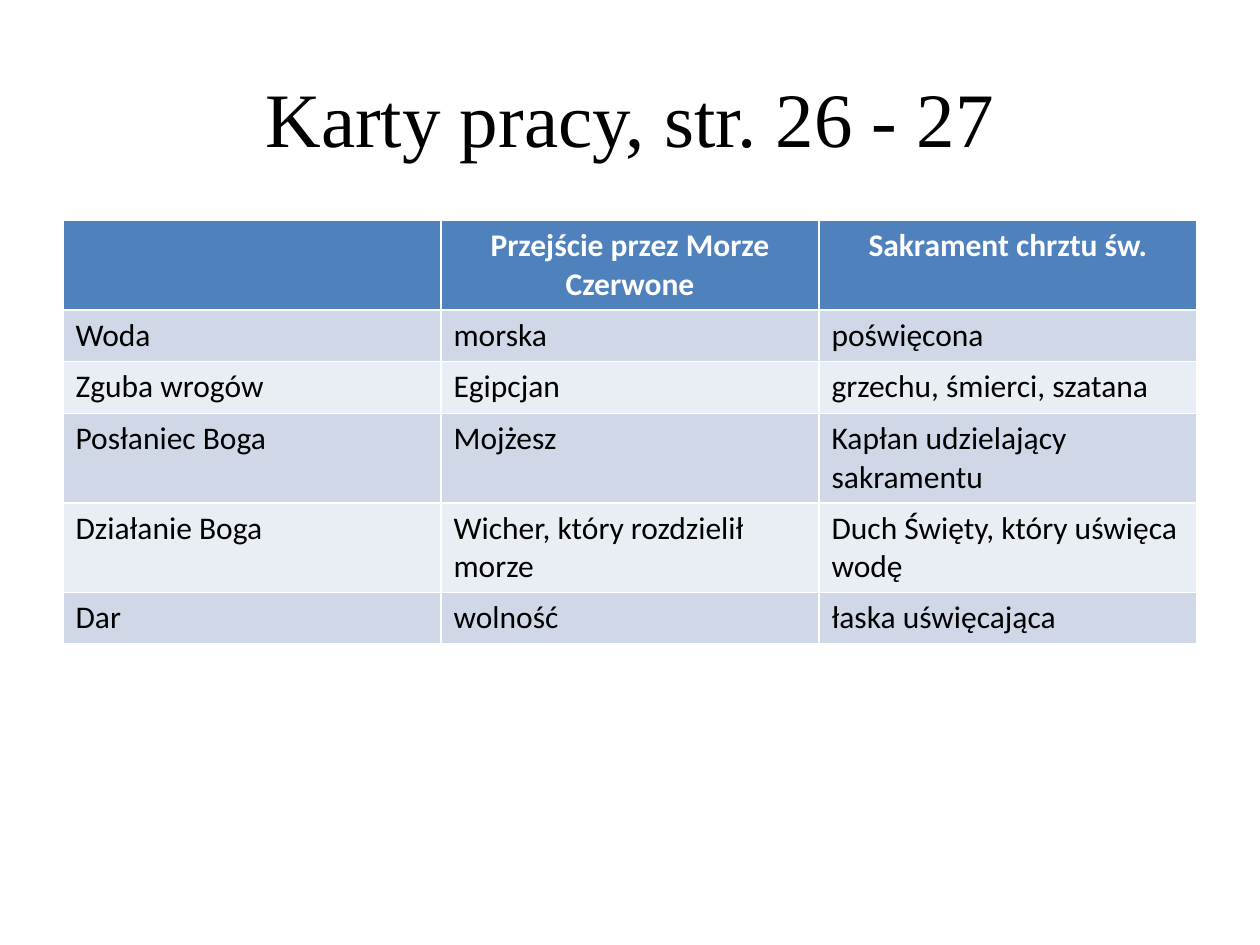
from pptx import Presentation
from pptx import util as u
from pptx.dml.color import RGBColor
from pptx.enum import text

COLOURS = {
    "header": "4F81BD",
    "odd": "D0D8E8",
    "even": "E9EDF4",
    "ink": "000000",
    "white": "FFFFFF",
}
TITLE = "Karty pracy, str. 26 - 27"
ROWS = [
    ("", "Przejście przez Morze Czerwone", "Sakrament chrztu św."),
    ("Woda", "morska", "poświęcona"),
    ("Zguba wrogów", "Egipcjan", "grzechu, śmierci, szatana"),
    ("Posłaniec Boga", "Mojżesz", "Kapłan udzielający sakramentu"),
    ("Działanie Boga", "Wicher, który rozdzielił morze", "Duch Święty, który uświęca wodę"),
    ("Dar", "wolność", "łaska uświęcająca"),
]
ROW_HEIGHT = 0.41


def colour(name):
    return RGBColor.from_string(COLOURS[name])


def style_text(para, font, size, ink, bold=False, align=None):
    para.alignment = align
    for span in para.runs:
        span.font.name = font
        span.font.size = u.Pt(size)
        span.font.bold = bold
        span.font.color.rgb = colour(ink)


def place_title(page, left, top, width, height):
    title = page.shapes.title
    title.left, title.top = u.Inches(left), u.Inches(top)
    title.width, title.height = u.Inches(width), u.Inches(height)
    frame = title.text_frame
    frame.text = TITLE
    frame.vertical_anchor = text.MSO_ANCHOR.MIDDLE
    style_text(frame.paragraphs[0], "Times New Roman", 44, "ink",
               align=text.PP_ALIGN.CENTER)


def place_comparison(page, left, top, width):
    """Equal columns; white rules come from the default table style."""
    table = page.shapes.add_table(
        len(ROWS), len(ROWS[0]), u.Inches(left), u.Inches(top),
        u.Inches(width), u.Inches(ROW_HEIGHT * len(ROWS))).table
    for r, row in enumerate(ROWS):
        header = r == 0
        fill = "header" if header else "odd" if r % 2 else "even"
        for c, wording in enumerate(row):
            cell = table.cell(r, c)
            cell.fill.solid()
            cell.fill.fore_color.rgb = colour(fill)
            if wording:
                cell.text = wording
                style_text(cell.text_frame.paragraphs[0], "Calibri", 18,
                           "white" if header else "ink", bold=header,
                           align=text.PP_ALIGN.CENTER if header else None)


def main():
    deck = Presentation()
    deck.slide_width, deck.slide_height = u.Inches(10), u.Inches(7.5)
    page = deck.slides.add_slide(deck.slide_layouts.get_by_name("Title Only"))
    place_title(page, 0.5, 0.3, 9, 1.25)
    place_comparison(page, 0.5, 1.75, 9)
    deck.save("out.pptx")


if __name__ == "__main__":
    main()
